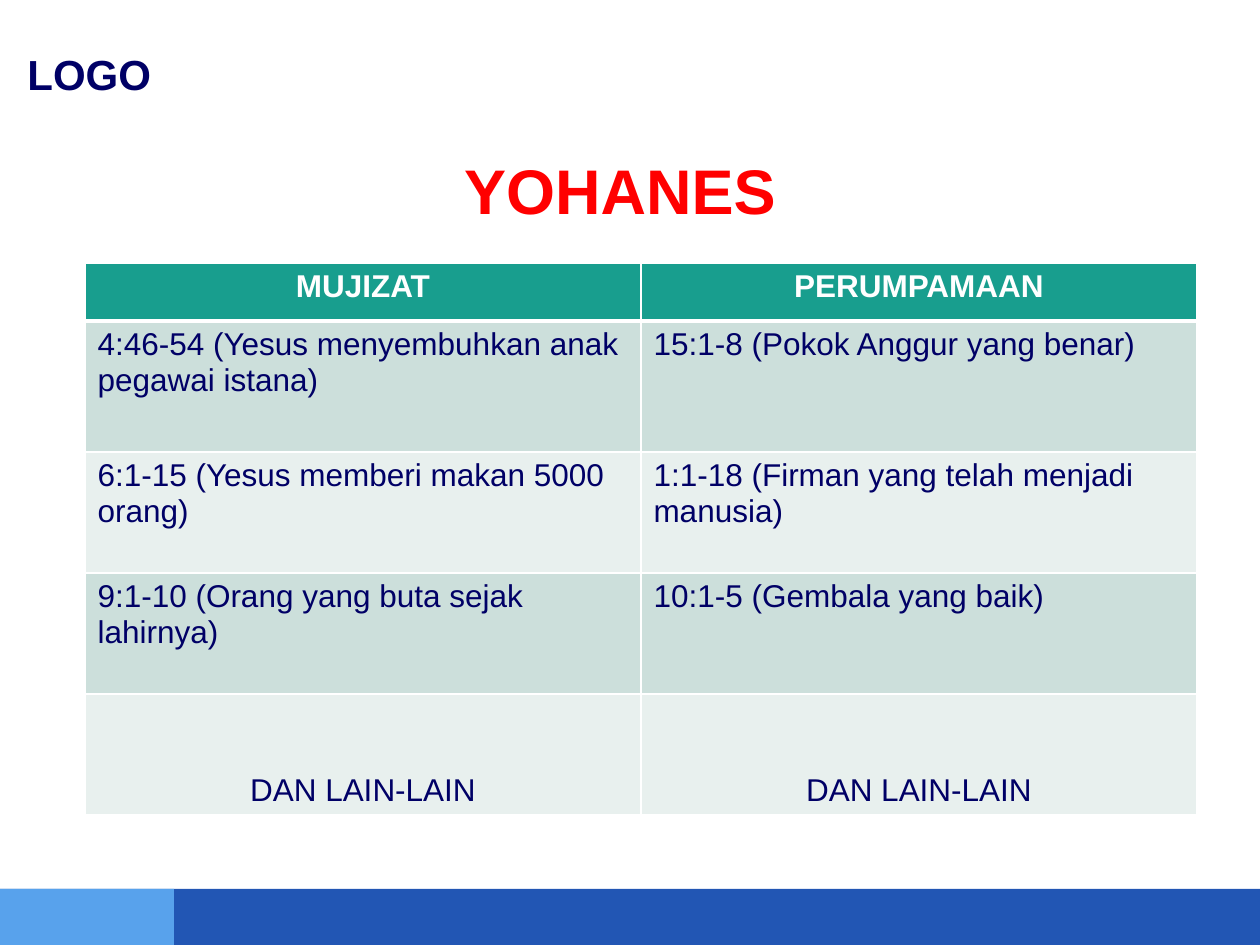
"""Build a slide that lists miracles and parables from the book of Yohanes."""
import dataclasses

import lxml.etree
import pptx
import pptx.dml.color
import pptx.enum.shapes
import pptx.enum.text
import pptx.oxml.ns
import pptx.util

ALIGN = pptx.enum.text.PP_ALIGN
ANCHOR = pptx.enum.text.MSO_ANCHOR


@dataclasses.dataclass(frozen=True)
class Theme:
    font: str = "Arial"
    navy: str = "000066"
    red: str = "FF0000"
    white: str = "FFFFFF"
    header: str = "189E8E"
    bands: tuple = ("CCDFDB", "E8F0EE")
    footer: str = "2256B4"
    accent: str = "58A2EC"
    title_size: int = 36
    logo_size: int = 24
    table_size: int = 18
    rule: int = 1
    header_rule: int = 3


THEME = Theme()
PAGE_SIZE = (1260, 945)
LOGO = ("LOGO", (15, 42, 168, 63))
TITLE = ("YOHANES", (136, 147, 968, 84))
FOOTER = [((0, 889, 1260, 56), THEME.footer), ((0, 889, 174, 56), THEME.accent)]
HEADINGS = ("MUJIZAT", "PERUMPAMAAN")
VERSES = [
    ("4:46-54 (Yesus menyembuhkan anak pegawai istana)", "15:1-8 (Pokok Anggur yang benar)"),
    ("6:1-15 (Yesus memberi makan 5000 orang)", "1:1-18 (Firman yang telah menjadi manusia)"),
    ("9:1-10 (Orang yang buta sejak lahirnya)", "10:1-5 (Gembala yang baik)"),
]
CLOSING = ("DAN LAIN-LAIN", "DAN LAIN-LAIN")
TABLE_PLACE = (85, 263)
COLUMN_WIDTH = 556
ROW_HEIGHTS = (58, 131, 121, 121, 121)


def px(length):
    return pptx.util.Emu(round(length * 914400 / 126))


def color(code):
    return pptx.dml.color.RGBColor.from_string(code)


def write(frame, text, size=THEME.table_size, ink=THEME.navy, bold=False, align=ALIGN.LEFT):
    frame.word_wrap = True
    para = frame.paragraphs[0]
    para.alignment = align
    span = para.add_run()
    span.text = text
    span.font.name = THEME.font
    span.font.size = pptx.util.Pt(size)
    span.font.bold = bold
    span.font.color.rgb = color(ink)


def add_text(page, text, place, anchor=ANCHOR.TOP, **style):
    box = page.shapes.add_textbox(*map(px, place))
    box.text_frame.vertical_anchor = anchor
    write(box.text_frame, text, **style)


def add_bar(page, place, fill):
    bar = page.shapes.add_shape(pptx.enum.shapes.MSO_SHAPE.RECTANGLE, *map(px, place))
    bar.shadow.inherit = False
    bar.fill.solid()
    bar.fill.fore_color.rgb = color(fill)
    bar.line.fill.background()


def add_borders(cell, **widths):
    properties = cell._tc.get_or_add_tcPr()
    for position, side in enumerate("LRTB"):
        line = lxml.etree.Element(pptx.oxml.ns.qn(f"a:ln{side}"))
        line.set("w", str(pptx.util.Pt(widths.get(side, THEME.rule))))
        solid = lxml.etree.SubElement(line, pptx.oxml.ns.qn("a:solidFill"))
        lxml.etree.SubElement(solid, pptx.oxml.ns.qn("a:srgbClr"), val=THEME.white)
        properties.insert(position, line)


def fill_cell(cell, text, fill, anchor=ANCHOR.TOP, borders=None, **style):
    cell.fill.solid()
    cell.fill.fore_color.rgb = color(fill)
    cell.vertical_anchor = anchor
    write(cell.text_frame, text, **style)
    add_borders(cell, **(borders or {}))


def add_verse_table(page):
    header = dict(ink=THEME.white, bold=True, align=ALIGN.CENTER, borders={"B": THEME.header_rule})
    first = dict(borders={"T": THEME.header_rule})
    closing = dict(anchor=ANCHOR.BOTTOM, align=ALIGN.CENTER)
    rows = [HEADINGS, *VERSES, CLOSING]
    styles = [header, first, {}, {}, closing]
    size = (COLUMN_WIDTH * len(HEADINGS), sum(ROW_HEIGHTS))
    table = page.shapes.add_table(len(rows), len(HEADINGS), *map(px, TABLE_PLACE + size)).table
    for column in table.columns:
        column.width = px(COLUMN_WIDTH)
    for index, (texts, style, height) in enumerate(zip(rows, styles, ROW_HEIGHTS)):
        table.rows[index].height = px(height)
        fill = THEME.bands[(index - 1) % 2] if index else THEME.header
        for column, text in enumerate(texts):
            fill_cell(table.cell(index, column), text, fill, **style)


def main():
    deck = pptx.Presentation()
    deck.slide_width, deck.slide_height = map(px, PAGE_SIZE)
    page = deck.slides.add_slide(deck.slide_layouts[6])
    for place, fill in FOOTER:
        add_bar(page, place, fill)
    add_text(page, *LOGO, size=THEME.logo_size, bold=True)
    add_text(page, *TITLE, anchor=ANCHOR.MIDDLE, size=THEME.title_size, ink=THEME.red,
             bold=True, align=ALIGN.CENTER)
    add_verse_table(page)
    deck.save("out.pptx")


if __name__ == "__main__":
    main()
